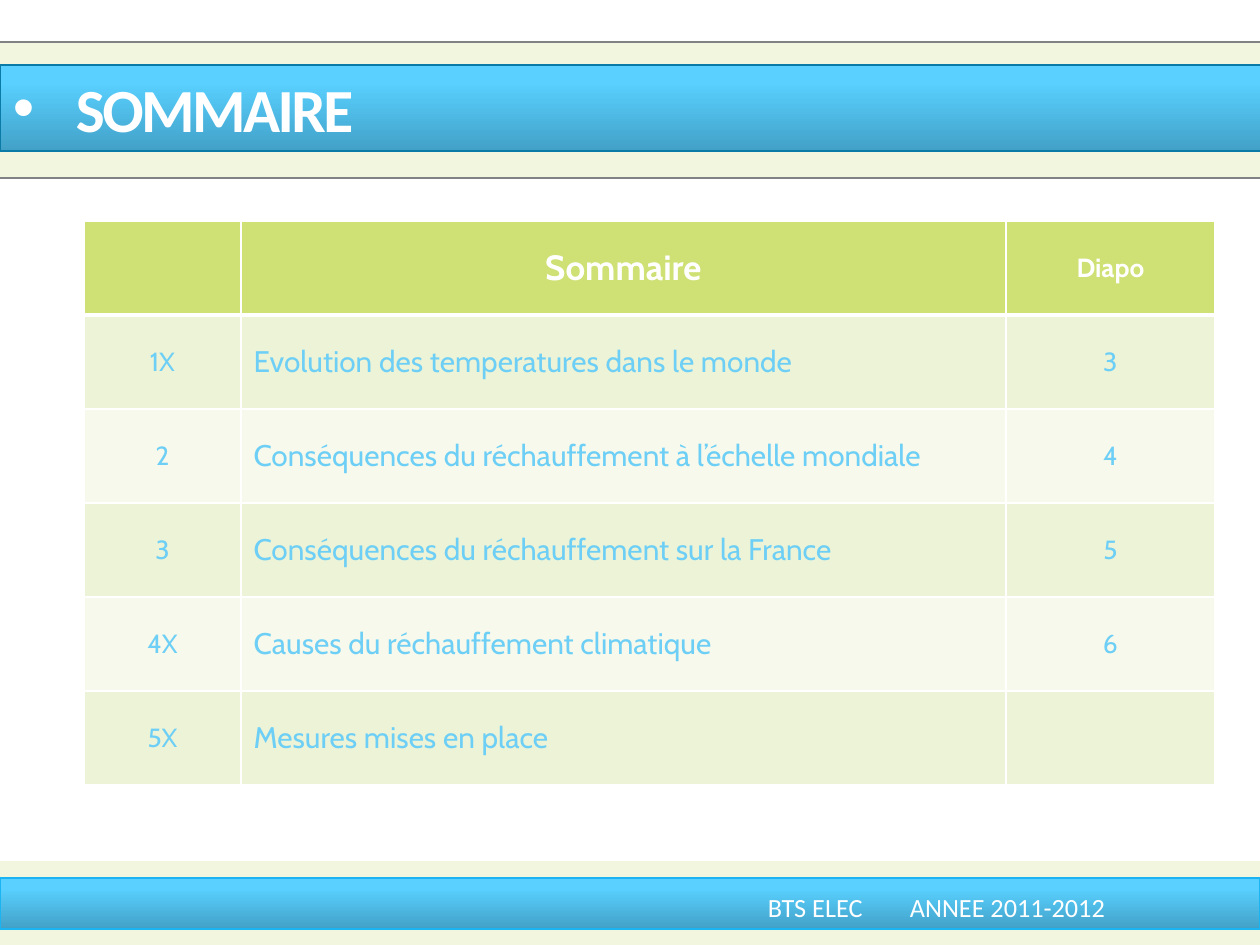
from copy import deepcopy

from lxml.etree import SubElement
from pptx import Presentation
from pptx.dml.color import RGBColor
from pptx.enum.shapes import MSO_CONNECTOR, MSO_SHAPE
from pptx.enum.text import MSO_ANCHOR, PP_ALIGN
from pptx.oxml.ns import qn
from pptx.util import Emu, Pt

EMU_PER_PX = 914400 / 126
COLORS = {
    "white": "FFFFFF",
    "band": "F2F6DE",
    "rule": "808285",
    "header": "CFE074",
    "odd_row": "EDF3D6",
    "even_row": "F6F9EB",
    "text": "6DCFF6",
    "title_line": "0A7BA7",
    "footer_line": "19B4F1",
}
BAR_GRADIENT = [("42A1C7", 0), ("59D0FF", 0.8), ("5BD0FF", 1)]
COLUMN_WIDTHS = [157, 765, 209]
ROW_HEIGHT = 94
ROWS = [
    ("", "Sommaire", "Diapo"),
    ("1X", "Evolution des temperatures dans le monde", "3"),
    ("2", "Conséquences du réchauffement à l’échelle mondiale", "4"),
    ("3", "Conséquences du réchauffement sur la France", "5"),
    ("4X", "Causes du réchauffement climatique", "6"),
    ("5X", "Mesures mises en place", ""),
]


def px(length):
    """Turn whole pixels into EMU."""
    return Emu(round(length * EMU_PER_PX))


def rgb(name):
    """Look up a named colour."""
    return RGBColor.from_string(COLORS[name])


def write_text(paragraph, text, *, size, color, font="Calibri", bold=False,
               align=PP_ALIGN.LEFT, spacing=0):
    """Add one formatted run to a paragraph."""
    paragraph.alignment = align
    run = paragraph.add_run()
    run.text = text
    run.font.name = font
    run.font.size = Pt(size)
    run.font.bold = bold
    run.font.color.rgb = rgb(color)
    if spacing:
        run.font._element.set("spc", str(round(spacing * 100)))


def add_rectangle(slide, left, top, width, height):
    """Add a rectangle without shadow."""
    shape = slide.shapes.add_shape(
        MSO_SHAPE.RECTANGLE, px(left), px(top), px(width), px(height))
    shape.shadow.inherit = False
    return shape


def add_band(slide, top, height):
    """Add a pale band across the slide."""
    shape = add_rectangle(slide, 0, top, 1260, height)
    shape.fill.solid()
    shape.fill.fore_color.rgb = rgb("band")
    shape.line.fill.background()


def add_rule(slide, y):
    """Add a thin grey line across the slide."""
    connector = slide.shapes.add_connector(
        MSO_CONNECTOR.STRAIGHT, px(0), px(y), px(1260), px(y))
    connector.line.color.rgb = rgb("rule")
    connector.line.width = Pt(0.75)
    SubElement(connector._element.spPr, qn("a:effectLst"))


def add_bar(slide, top, width, height, line_color, inset_left, inset_top):
    """Add a blue gradient bar and return its paragraph."""
    shape = add_rectangle(slide, 0, top, width, height)
    shape.fill.gradient()
    shape.fill.gradient_angle = 90
    stop_list = shape._element.spPr.find(".//" + qn("a:gsLst"))
    stop_list.append(deepcopy(stop_list[-1]))
    for stop, (color, position) in zip(shape.fill.gradient_stops, BAR_GRADIENT):
        stop.color.rgb = RGBColor.from_string(color)
        stop.position = position
    shape.line.color.rgb = rgb(line_color)
    shape.line.width = Pt(0.75)
    frame = shape.text_frame
    frame.word_wrap = True
    frame.vertical_anchor = MSO_ANCHOR.TOP
    frame.margin_left, frame.margin_top = px(inset_left), px(inset_top)
    frame.margin_bottom = 0
    return frame.paragraphs[0]


def add_title(slide):
    """Add the bulleted title bar."""
    paragraph = add_bar(slide, 65, 1265, 86, "title_line", 13, 6)
    properties = paragraph._p.get_or_add_pPr()
    properties.set("marL", str(px(63)))
    properties.set("indent", str(px(-63)))
    SubElement(properties, qn("a:buFont")).set("typeface", "Arial")
    SubElement(properties, qn("a:buChar")).set("char", "•")
    write_text(paragraph, "SOMMAIRE", size=35, color="white", bold=True,
               spacing=-1.5)


def add_footer(slide):
    """Add the footer bar with a tab between its two parts."""
    paragraph = add_bar(slide, 878, 1260, 51, "footer_line", 768, 13)
    tabs = SubElement(paragraph._p.get_or_add_pPr(), qn("a:tabLst"))
    tab = SubElement(tabs, qn("a:tab"))
    tab.set("pos", str(px(142)))
    tab.set("algn", "l")
    write_text(paragraph, "BTS ELEC\tANNEE 2011-2012", size=15, color="white")


def style_cell(cell, row, fill):
    """Set the fill, anchor and white borders of a cell."""
    cell.vertical_anchor = MSO_ANCHOR.MIDDLE
    properties = cell._tc.get_or_add_tcPr()
    thick_side = {0: "lnB", 1: "lnT"}.get(row)
    for side in ("lnL", "lnR", "lnT", "lnB"):
        border = SubElement(properties, qn("a:" + side))
        border.set("w", str(Pt(3 if side == thick_side else 1)))
        solid = SubElement(border, qn("a:solidFill"))
        SubElement(solid, qn("a:srgbClr")).set("val", COLORS["white"])
    cell.fill.solid()
    cell.fill.fore_color.rgb = rgb(fill)


def add_contents_table(slide):
    """Add the table of contents."""
    table = slide.shapes.add_table(
        len(ROWS), len(COLUMN_WIDTHS), px(84), px(221),
        px(sum(COLUMN_WIDTHS)), px(ROW_HEIGHT * len(ROWS))).table
    for column, width in zip(table.columns, COLUMN_WIDTHS):
        column.width = px(width)
    for row, texts in enumerate(ROWS):
        table.rows[row].height = px(ROW_HEIGHT)
        header = row == 0
        fill = "header" if header else "odd_row" if row % 2 else "even_row"
        for column, text in enumerate(texts):
            cell = table.cell(row, column)
            style_cell(cell, row, fill)
            if not text:
                continue
            topic = column == 1
            write_text(
                cell.text_frame.paragraphs[0], text, font="Cabin", bold=header,
                size=(20 if header else 17) if topic else 15,
                color="white" if header else "text",
                align=PP_ALIGN.LEFT if topic and not header else PP_ALIGN.CENTER)


def main():
    """Build and save the slide."""
    presentation = Presentation()
    presentation.slide_width, presentation.slide_height = px(1260), px(945)
    slide = presentation.slides.add_slide(presentation.slide_layouts[6])
    add_band(slide, 42, 136)
    add_band(slide, 861, 84)
    for y in (178, 42):
        add_rule(slide, y)
    add_contents_table(slide)
    add_title(slide)
    add_footer(slide)
    presentation.save("out.pptx")


if __name__ == "__main__":
    main()
